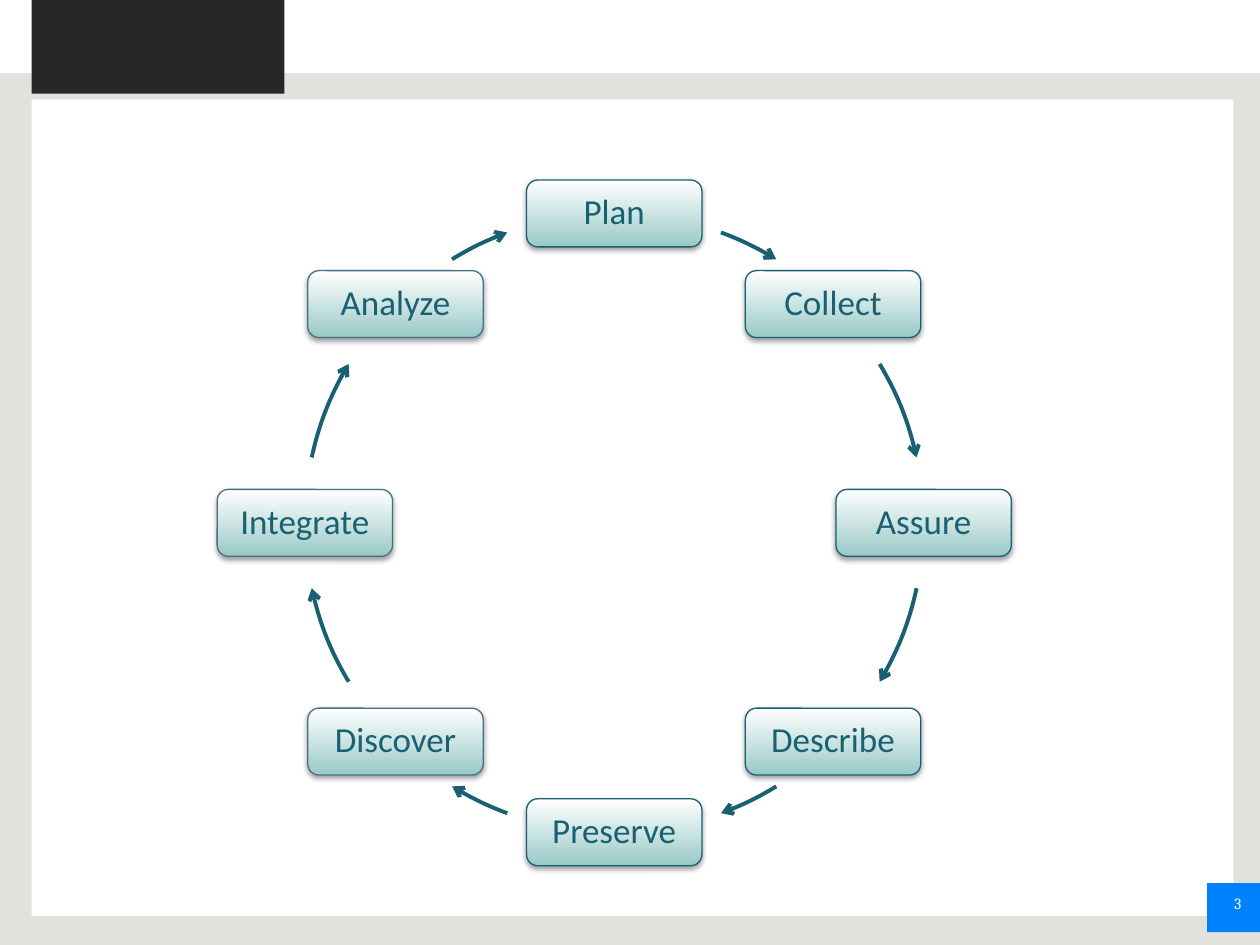
from dataclasses import dataclass
from math import cos, radians, sin
from typing import NamedTuple

from lxml.etree import SubElement
from pptx import Presentation
from pptx.dml.color import RGBColor as RGB
from pptx.enum.shapes import MSO_SHAPE as SHAPE
from pptx.enum.text import MSO_ANCHOR as ANCHOR, PP_ALIGN as ALIGN
from pptx.oxml.ns import qn
from pptx.util import Pt


@dataclass(frozen=True)
class Theme:
    page: str = "E0E2DC"
    white: str = "FFFFFF"
    dark: str = "272727"
    badge: str = "0081FF"
    teal: str = "186072"
    muted: str = "457184"
    mint: str = "99C9C7"
    shadow: str = "000000"
    step_font: str = "Calibri"
    number_font: str = "Cambria"
    step_size: float = 20
    number_size: float = 9


class Block(NamedTuple):
    x: float
    y: float
    w: float
    h: float
    color: str


class Step(NamedTuple):
    label: str
    outline: str
    arc_start: float
    arc_end: float


T = Theme()
CX, CY, RADIUS = 351, 298.8, 176.8
BOX_W, BOX_H = 100.2, 38.2

BLOCKS = [
    Block(0, 0, 720, 41.8, T.white),
    Block(18, 0, 144.6, 53.5, T.dark),
    Block(18, 56.8, 686.8, 466.6, T.white),
    Block(689.8, 504.6, 30.2, 28.1, T.badge),
]

STEPS = [
    Step("Plan", T.teal, 20.2, 31.6),
    Step("Collect", T.teal, 59.1, 77.8),
    Step("Assure", T.teal, 102.2, 120.9),
    Step("Describe", T.teal, 148.4, 159.8),
    Step("Preserve", T.teal, 200.2, 211.6),
    Step("Discover", T.muted, 239.1, 257.8),
    Step("Integrate", T.muted, 282.2, 300.9),
    Step("Analyze", T.muted, 328.4, 339.8),
]


def rgb(color: str) -> RGB:
    return RGB.from_string(color)


def set_text(sp, text: str, font: str, size: float, color: str,
             align: ALIGN, inset: float) -> None:
    tf = sp.text_frame
    tf.word_wrap = True
    tf.vertical_anchor = ANCHOR.MIDDLE
    tf.margin_left = tf.margin_right = Pt(inset)
    tf.margin_top = tf.margin_bottom = Pt(0)
    p = tf.paragraphs[0]
    p.text = text
    p.alignment = align
    p.line_spacing = 0.9
    f = p.runs[0].font
    f.name, f.size, f.color.rgb = font, Pt(size), rgb(color)


def add_block(s, b: Block) -> None:
    sp = s.shapes.add_shape(SHAPE.RECTANGLE, Pt(b.x), Pt(b.y), Pt(b.w), Pt(b.h))
    sp.shadow.inherit = False
    sp.fill.solid()
    sp.fill.fore_color.rgb = rgb(b.color)
    sp.line.fill.background()


def add_shadow(sp) -> None:
    sp.shadow.inherit = False
    effects = sp.element.spPr.find(qn("a:effectLst"))
    shadow = SubElement(effects, qn("a:outerShdw"), blurRad=str(Pt(3.1)),
                        dist=str(Pt(1.6)), dir="5400000", rotWithShape="0")
    color = SubElement(shadow, qn("a:srgbClr"), val=T.shadow)
    SubElement(color, qn("a:alpha"), val="38000")


def add_step(s, step: Step, angle: float) -> None:
    x = CX + RADIUS * sin(radians(angle)) - BOX_W / 2
    y = CY - RADIUS * cos(radians(angle)) - BOX_H / 2
    sp = s.shapes.add_shape(SHAPE.ROUNDED_RECTANGLE, Pt(x), Pt(y), Pt(BOX_W), Pt(BOX_H))
    add_shadow(sp)
    sp.fill.gradient()
    sp.fill.gradient_angle = 270
    for stop, color, position in zip(sp.fill.gradient_stops, (T.white, T.mint), (0, 1)):
        stop.color.rgb = rgb(color)
        stop.position = position
    sp.line.color.rgb = rgb(step.outline)
    sp.line.width = Pt(0.75)
    set_text(sp, step.label, T.step_font, T.step_size, T.teal, ALIGN.CENTER, 5.8)


def add_arc(s, step: Step) -> None:
    sp = s.shapes.add_shape(SHAPE.ARC, Pt(CX - RADIUS), Pt(CY - RADIUS),
                            Pt(2 * RADIUS), Pt(2 * RADIUS))
    for i, angle in enumerate((step.arc_start, step.arc_end)):
        sp.adjustments[i] = (angle - 90) % 360 * 0.6
    sp.shadow.inherit = False
    sp.fill.background()
    sp.line.color.rgb = rgb(T.teal)
    sp.line.width = Pt(2.25)
    SubElement(sp.element.spPr.find(qn("a:ln")), qn("a:tailEnd"), type="arrow")


def main() -> None:
    prs = Presentation()
    prs.slide_width, prs.slide_height = Pt(720), Pt(540)
    s = prs.slides.add_slide(prs.slide_layouts[6])
    s.background.fill.solid()
    s.background.fill.fore_color.rgb = rgb(T.page)

    for block in BLOCKS:
        add_block(s, block)
    number = s.shapes.add_textbox(Pt(675.4), Pt(509.8), Pt(41), Pt(14.4))
    set_text(number, "3", T.number_font, T.number_size, T.white, ALIGN.RIGHT, 7.2)

    for i, step in enumerate(STEPS):
        add_step(s, step, i * 360 / len(STEPS))
        add_arc(s, step)

    prs.save("out.pptx")


if __name__ == "__main__":
    main()
